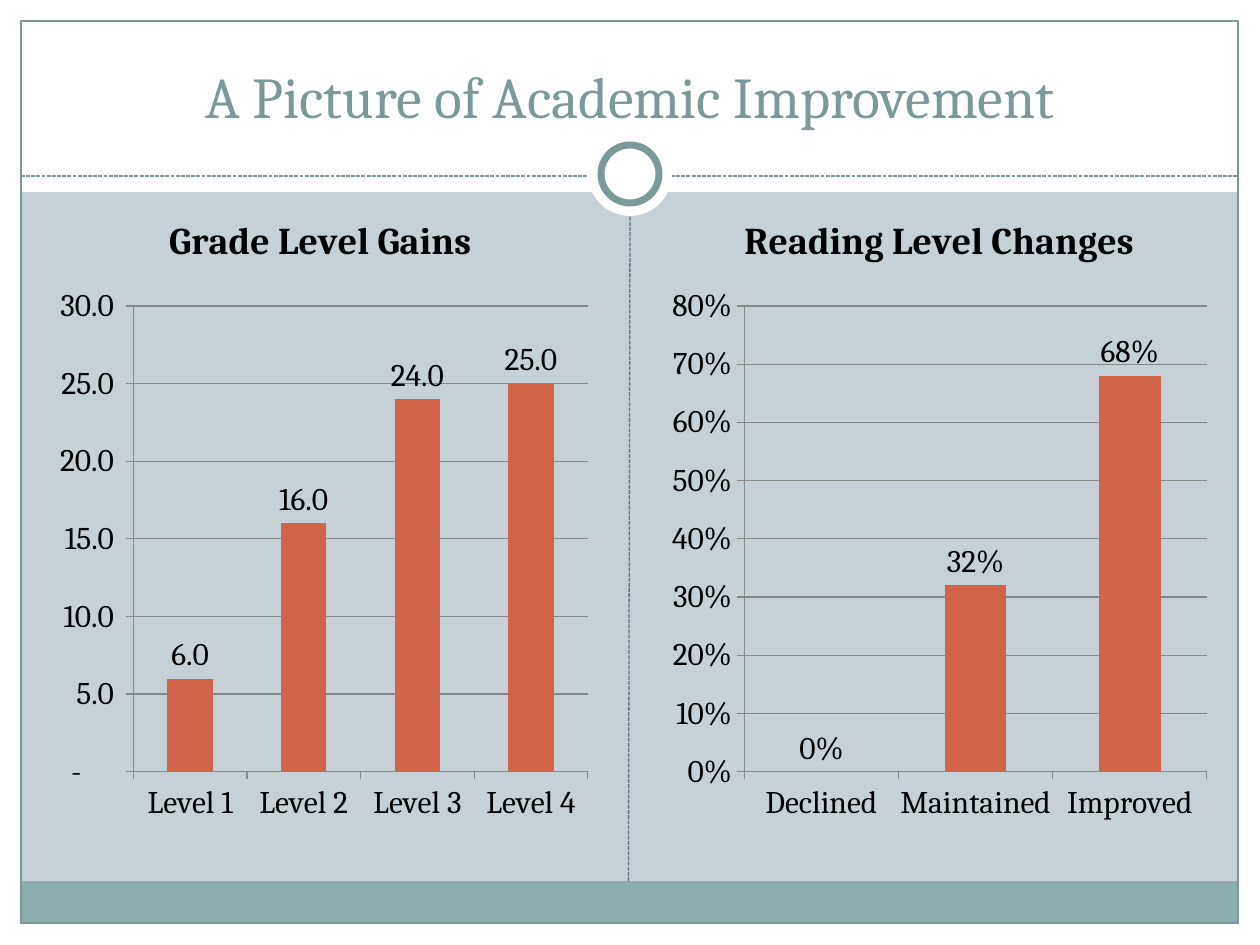
from dataclasses import dataclass
from typing import Any

from pptx import Presentation
from pptx.chart.data import CategoryChartData
from pptx.dml.color import RGBColor
from pptx.enum.chart import XL_CHART_TYPE, XL_LABEL_POSITION, XL_TICK_MARK
from pptx.enum.dml import MSO_LINE
from pptx.enum.shapes import MSO_CONNECTOR, MSO_SHAPE
from pptx.enum.text import MSO_ANCHOR, PP_ALIGN
from pptx.oxml.ns import qn
from pptx.util import Pt
from lxml.etree import SubElement

SCALE = 914400 / 126
WHITE, TEAL, BAND, SLATE = "FFFFFF", "7C999A", "8CADAE", "646B86"
BACKGROUND, BAR, GRID, BLACK = "C5D1D7", "D16349", "878787", "000000"
ACCOUNTING = '_(* #,##0.0_);_(* \\(#,##0.0\\);_(* "-"??_);_(@_)'


def px(*lengths):
    return [round(length * SCALE) for length in lengths]


def color(hex_value):
    return RGBColor.from_string(hex_value)


@dataclass
class Deck:
    """Draws styled elements on the current slide."""
    slide: Any
    font: str = "Cambria"

    def background(self, fill):
        self.slide.background.fill.solid()
        self.slide.background.fill.fore_color.rgb = color(fill)

    def shape(self, box, fill=None, line=None, width=0.75, kind=MSO_SHAPE.RECTANGLE):
        shape = self.slide.shapes.add_shape(kind, *px(*box))
        shape.shadow.inherit = False
        if fill:
            shape.fill.solid()
            shape.fill.fore_color.rgb = color(fill)
        else:
            shape.fill.background()
        if line:
            shape.line.color.rgb = color(line)
            shape.line.width = Pt(width)
        else:
            shape.line.fill.background()
        return shape

    def dashed(self, start, end, line):
        connector = self.slide.shapes.add_connector(
            MSO_CONNECTOR.STRAIGHT, *px(*start, *end))
        connector.line.color.rgb = color(line)
        connector.line.width = Pt(0.75)
        connector.line.dash_style = MSO_LINE.SQUARE_DOT
        SubElement(connector._element.spPr, qn("a:effectLst"))
        return connector

    def title(self, box, text, size):
        frame = self.slide.shapes.add_textbox(*px(*box)).text_frame
        frame.word_wrap = True
        frame.vertical_anchor = MSO_ANCHOR.BOTTOM
        heading = frame.paragraphs[0]
        heading.text = text
        heading.alignment = PP_ALIGN.CENTER
        self.style(heading.font, size, TEAL)

    def style(self, font, size, hex_value, bold=False):
        font.name, font.size, font.bold = self.font, Pt(size), bold
        font.color.rgb = color(hex_value)

    def columns(self, box, heading, values, number_format):
        data = CategoryChartData(number_format=number_format)
        data.categories = list(values)
        data.add_series("Series 1", list(values.values()))
        chart = self.slide.shapes.add_chart(
            XL_CHART_TYPE.COLUMN_CLUSTERED, *px(*box), data).chart
        self.style(chart.font, 18, BLACK)
        chart.has_legend = False
        chart.has_title = True
        caption = chart.chart_title.text_frame.paragraphs[0]
        caption.text = heading
        self.style(caption.font, 21.6, BLACK, bold=True)

        for axis in (chart.category_axis, chart.value_axis):
            axis.major_tick_mark = XL_TICK_MARK.OUTSIDE
            axis.format.line.color.rgb = color(GRID)
        scale = chart.value_axis
        scale.has_major_gridlines = True
        scale.major_gridlines.format.line.color.rgb = color(GRID)
        scale.tick_labels.number_format = number_format
        scale.tick_labels.number_format_is_linked = False

        plot = chart.plots[0]
        plot.gap_width = 150
        plot.vary_by_categories = False
        plot.has_data_labels = True
        labels = plot.data_labels
        labels.show_value = True
        labels.number_format = number_format
        labels.number_format_is_linked = False
        labels.position = XL_LABEL_POSITION.OUTSIDE_END
        self.style(labels.font, 18, BLACK)
        bars = plot.series[0].format.fill
        bars.solid()
        bars.fore_color.rgb = color(BAR)


def main():
    presentation = Presentation()
    presentation.slide_width, presentation.slide_height = px(1260, 945)
    deck = Deck(presentation.slides.add_slide(presentation.slide_layouts[6]))
    deck.background(BACKGROUND)

    for margin in ((0, 924, 1260, 21), (0, 0, 1260, 192),
                   (0, 0, 21, 945), (1239, 0, 21, 945)):
        deck.shape(margin, WHITE)
    footer = deck.shape((20, 881, 1217, 43), BAND)
    deck.shape((21, 21, 1217, 902), line=TEAL)
    deck.dashed((21, 176), (1239, 176), TEAL)
    deck.shape((588, 132, 84, 84), WHITE, kind=MSO_SHAPE.OVAL)
    deck.shape((601, 145, 58, 58), WHITE, TEAL, 4, MSO_SHAPE.OVAL)
    divider = deck.dashed((629, 881), (630, 216), SLATE)
    divider.begin_connect(footer, 0)

    deck.title((42, 32, 1176, 104), "A Picture of Academic Improvement", 33)
    deck.columns((42, 189, 557, 645), "Grade Level Gains",
                 {"Level 1": 6, "Level 2": 16, "Level 3": 24, "Level 4": 25},
                 ACCOUNTING)
    deck.columns((661, 189, 557, 645), "Reading Level Changes",
                 {"Declined": 0, "Maintained": 0.32, "Improved": 0.68}, "0%")
    presentation.save("out.pptx")


if __name__ == "__main__":
    main()
